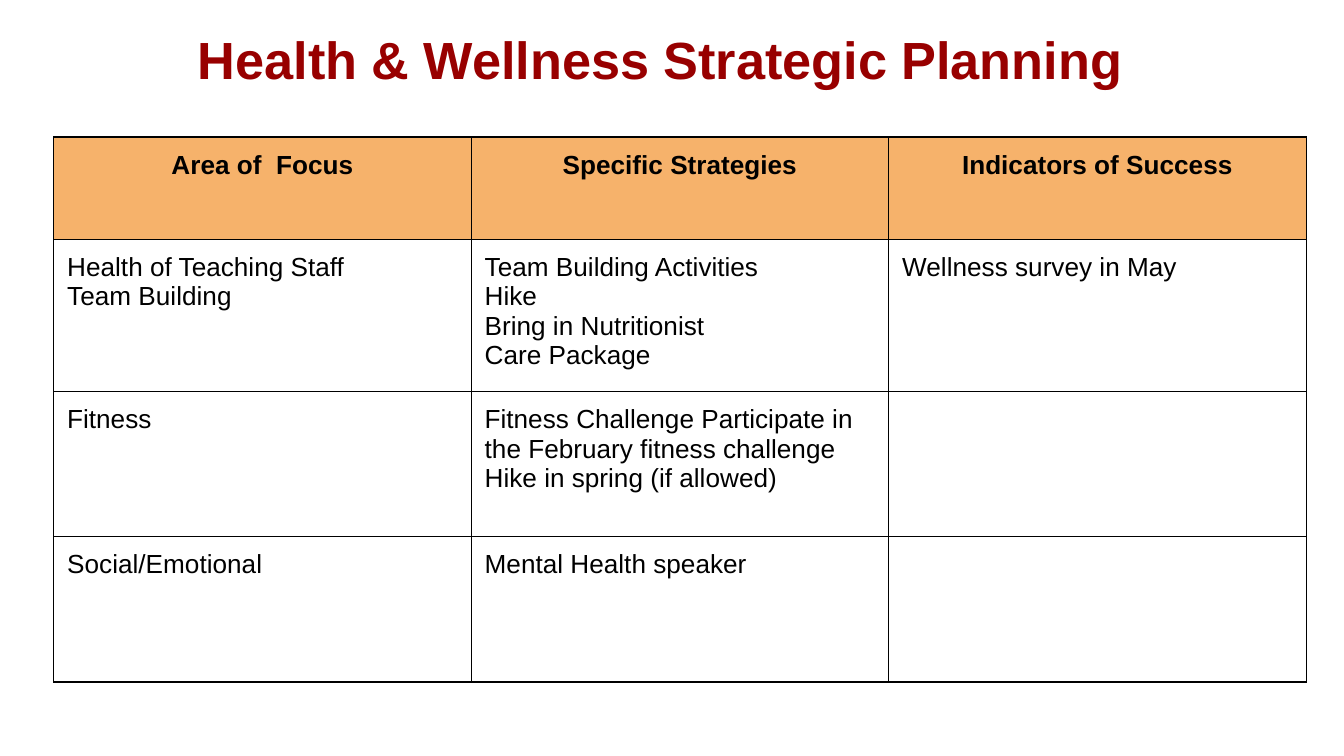
from dataclasses import dataclass

from lxml.etree import SubElement
from pptx import Presentation
from pptx.dml.color import RGBColor
from pptx.enum.text import MSO_ANCHOR, PP_ALIGN
from pptx.oxml.ns import qn
from pptx.util import Inches, Pt


@dataclass(frozen=True)
class Theme:
    font: str = "Arial"
    title: str = "980000"
    text: str = "000000"
    header: str = "F6B26B"
    border: str = "000000"
    title_size: int = 28
    table_size: int = 14
    border_width: float = 0.75
    inset: float = 0.1


THEME = Theme()
HEADERS = ["Area of  Focus", "Specific Strategies", "Indicators of Success"]
# One row per focus area; each cell is a list of paragraphs.
PLAN = [
    [
        ["Health of Teaching Staff", "Team Building"],
        ["Team Building Activities", "Hike", "Bring in Nutritionist", "Care Package"],
        ["Wellness survey in May"],
    ],
    [
        ["Fitness"],
        [
            "Fitness Challenge Participate in the February fitness challenge",
            "Hike in spring (if allowed)",
        ],
        [],
    ],
    [["Social/Emotional"], ["Mental Health speaker"], []],
]


def set_margins(box):
    for side in ("left", "top", "right", "bottom"):
        setattr(box, f"margin_{side}", Inches(THEME.inset))


def write(tf, lines, size, color, bold=False, align=PP_ALIGN.LEFT):
    """Put each line in a paragraph whose end mark has the size of its text."""
    for i, line in enumerate(lines):
        p = tf.add_paragraph() if i else tf.paragraphs[0]
        p.alignment = align
        r = p.add_run()
        r.text = line
        for name, value in {"name": THEME.font, "size": Pt(size), "bold": bold}.items():
            setattr(r.font, name, value)
        r.font.color.rgb = RGBColor.from_string(color)
        SubElement(p._p, qn("a:endParaRPr"), sz=str(size * 100))


def add_borders(cell):
    """Outline a cell; call before filling it, as lines precede the fill in XML."""
    tc_pr = cell._tc.get_or_add_tcPr()
    for tag in ("a:lnL", "a:lnR", "a:lnT", "a:lnB"):
        ln = SubElement(tc_pr, qn(tag), w=str(Pt(THEME.border_width)))
        fill = SubElement(ln, qn("a:solidFill"))
        SubElement(fill, qn("a:srgbClr"), val=THEME.border)


def add_title(slide, text, left, top, width, height):
    box = slide.shapes.add_textbox(*map(Inches, (left, top, width, height)))
    tf = box.text_frame
    tf.word_wrap = True
    tf.vertical_anchor = MSO_ANCHOR.TOP
    set_margins(tf)
    write(tf, [text], THEME.title_size, THEME.title, True, PP_ALIGN.CENTER)


def add_plan_table(slide, left, top, width, header_height, row_height):
    rows = [[[header] for header in HEADERS]] + PLAN
    height = header_height + row_height * len(PLAN)
    table = slide.shapes.add_table(
        len(rows), len(HEADERS), *map(Inches, (left, top, width, height))
    ).table
    table.horz_banding = False
    for column in table.columns:
        column.width = Inches(width / len(HEADERS))
    for i, row in enumerate(rows):
        is_header = i == 0
        table.rows[i].height = Inches(header_height if is_header else row_height)
        align = PP_ALIGN.CENTER if is_header else PP_ALIGN.LEFT
        for j, lines in enumerate(row):
            cell = table.cell(i, j)
            set_margins(cell)
            add_borders(cell)
            if is_header:
                cell.fill.solid()
                cell.fill.fore_color.rgb = RGBColor.from_string(THEME.header)
            else:
                cell.fill.background()
            write(cell.text_frame, lines, THEME.table_size, THEME.text, is_header, align)


def main():
    prs = Presentation()
    prs.slide_width = Inches(10)
    prs.slide_height = prs.slide_width * 9 // 16
    slide = prs.slides.add_slide(prs.slide_layouts[6])
    add_title(slide, "Health & Wellness Strategic Planning", 0.25, 0.1, 9.32, 0.63)
    add_plan_table(slide, 0.4, 1.02, 9.32, 0.76, 1.08)
    prs.save("out.pptx")


if __name__ == "__main__":
    main()
